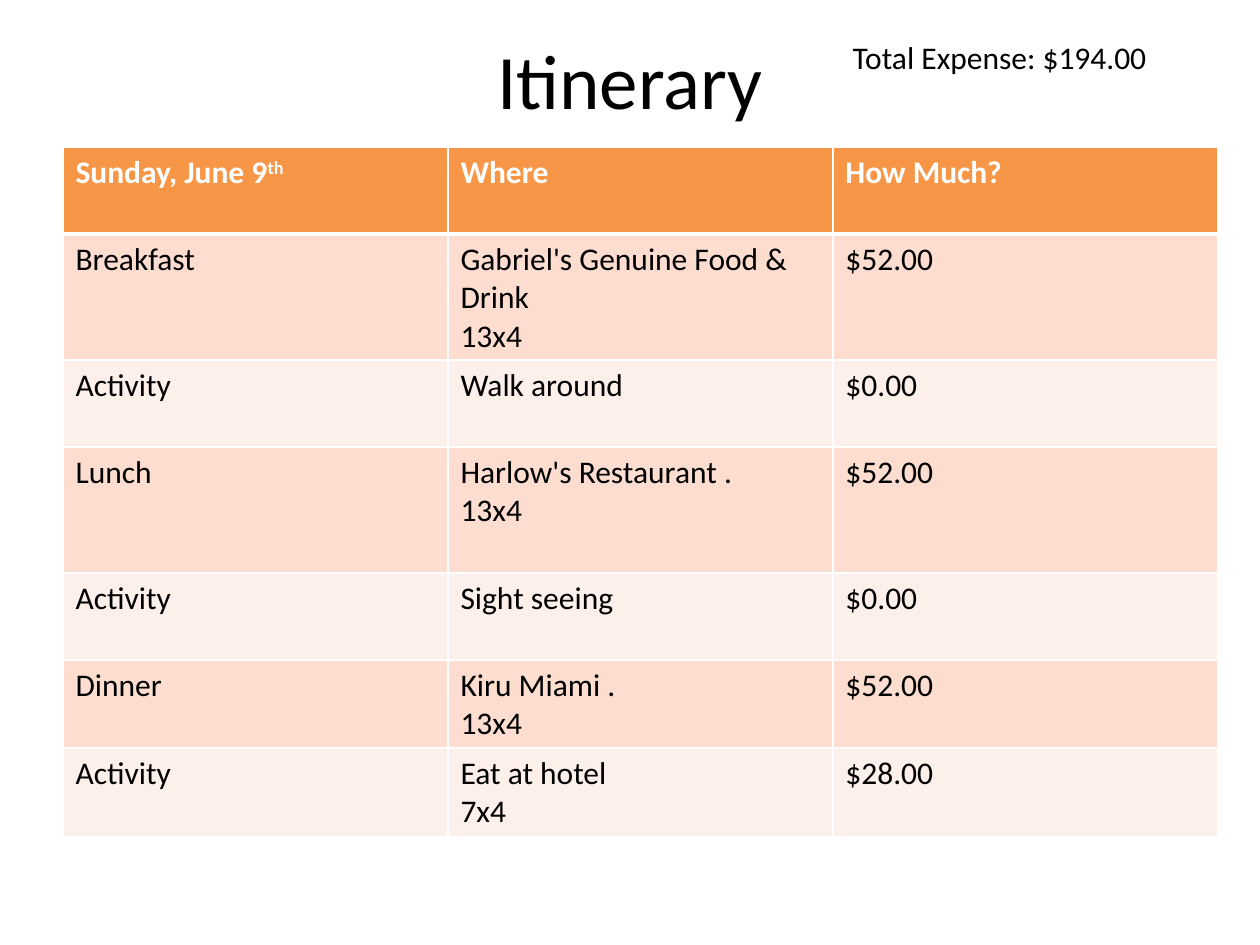
from lxml import etree
from pptx import Presentation
from pptx import util as u
from pptx.dml.color import RGBColor
from pptx.enum import text
from pptx.oxml import ns

HEADER = ["Sunday, June 9", "Where", "How Much?"]
PLANS = [
    ["Breakfast", "Gabriel's Genuine Food & Drink\n13x4", "$52.00"],
    ["Activity", "Walk around", "$0.00"],
    ["Lunch", "Harlow's Restaurant .\n13x4", "$52.00"],
    ["Activity", "Sight seeing", "$0.00"],
    ["Dinner", "Kiru Miami .\n13x4", "$52.00"],
    ["Activity", "Eat at hotel\n7x4", "$28.00"],
]
ROW_HEIGHTS = [1.75, 2.54, 1.75, 2.54, 1.75, 1.75, 1.75]
COLUMN_WIDTH = 7.76


def colour(code):
    return RGBColor.from_string(code)


class ItineraryPage:
    font = "Calibri"
    ink = "000000"
    white = "FFFFFF"
    header_fill = "F79646"
    bands = ["FCDDCF", "FDEFE9"]

    def __init__(self, deck):
        self.page = deck.slides.add_slide(deck.slide_layouts[6])

    def style(self, span, size, code, bold=False):
        span.font.name = self.font
        span.font.size = u.Pt(size)
        span.font.bold = bold
        span.font.color.rgb = colour(code)

    def set_words(self, frame, words, size, code, bold=False):
        frame.text = words
        for para in frame.paragraphs:
            for span in para.runs:
                self.style(span, size, code, bold)

    def text_box(self, words, left, top, width, height, size):
        box = self.page.shapes.add_textbox(
            u.Cm(left), u.Cm(top), u.Cm(width), u.Cm(height))
        box.text_frame.word_wrap = True
        self.set_words(box.text_frame, words, size, self.ink)
        return box.text_frame

    def borders(self, cell, bottom):
        """Draw white lines on all four sides; bottom is that side's width in points."""
        properties = cell._tc.get_or_add_tcPr()
        for side, width in zip("LRTB", [1, 1, 1, bottom]):
            line = etree.SubElement(
                properties, ns.qn(f"a:ln{side}"), w=str(u.Pt(width)))
            fill = etree.SubElement(line, ns.qn("a:solidFill"))
            etree.SubElement(fill, ns.qn("a:srgbClr"), val=self.white)

    def table(self, rows, left, top):
        columns = len(rows[0])
        table = self.page.shapes.add_table(
            len(rows), columns, u.Cm(left), u.Cm(top),
            u.Cm(COLUMN_WIDTH * columns), u.Cm(sum(ROW_HEIGHTS))).table
        for column in table.columns:
            column.width = u.Cm(COLUMN_WIDTH)
        for index, words in enumerate(rows):
            table.rows[index].height = u.Cm(ROW_HEIGHTS[index])
            header = index == 0
            fill = self.header_fill if header else self.bands[(index - 1) % 2]
            for cell, value in zip(table.rows[index].cells, words):
                self.set_words(cell.text_frame, value, 18,
                               self.white if header else self.ink, header)
                self.borders(cell, 3 if header else 1)
                cell.fill.solid()
                cell.fill.fore_color.rgb = colour(fill)
        return table

    def superscript(self, para, words):
        span = para.add_run()
        span.text = words
        self.style(span, 18, self.white, True)
        span._r.get_or_add_rPr().set("baseline", "30000")


def main():
    deck = Presentation()
    deck.slide_width, deck.slide_height = u.Cm(25.4), u.Cm(19.05)
    itinerary = ItineraryPage(deck)

    title = itinerary.text_box("Itinerary", 1.27, 0, 22.86, 3.18, 44)
    title.vertical_anchor = text.MSO_ANCHOR.MIDDLE
    title.paragraphs[0].alignment = text.PP_ALIGN.CENTER

    total = itinerary.text_box("Total Expense: $194.00", 16.94, 0.64, 7.82, 1.03, 18)
    total.auto_size = text.MSO_AUTO_SIZE.SHAPE_TO_FIT_TEXT

    table = itinerary.table([HEADER] + PLANS, 1.27, 2.97)
    itinerary.superscript(table.cell(0, 0).text_frame.paragraphs[0], "th")

    deck.save("out.pptx")


if __name__ == "__main__":
    main()
